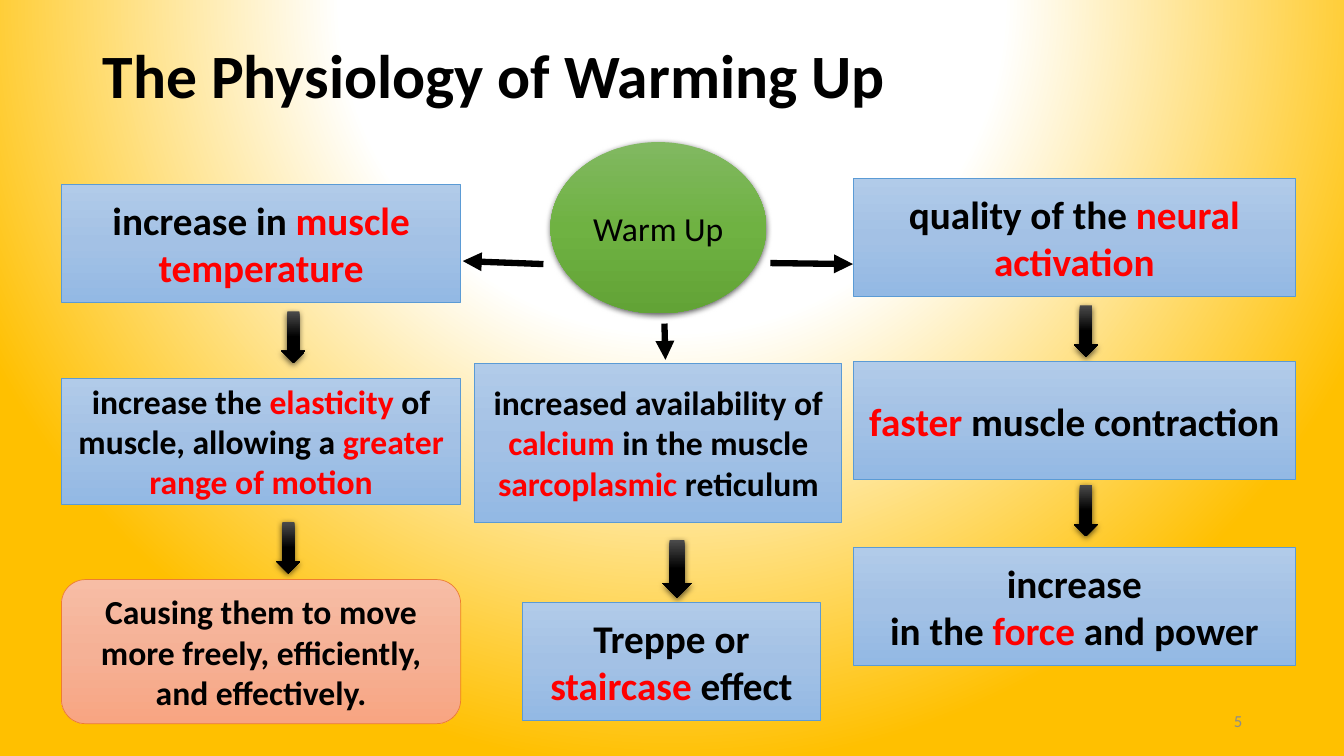
from lxml.etree import SubElement
from pptx import Presentation
from pptx.dml.color import RGBColor
from pptx.enum.shapes import MSO_CONNECTOR, MSO_SHAPE
from pptx.enum.text import MSO_ANCHOR, PP_ALIGN
from pptx.oxml import parse_xml
from pptx.oxml.ns import nsdecls, qn
from pptx.util import Inches, Pt

BLACK, RED = "000000", "FF0000"
BLUE_FILL = [(0, "B1CBE9"), (50, "A3C1E5"), (100, "93B9E4")]
ORANGE_FILL = [(0, "F7BDA5"), (50, "F5B196"), (100, "F8A582")]
GREEN_FILL = [(0, "81B861"), (50, "6FB242"), (100, "62A336")]
BLACK_FILL = [(0, "4B4B4B"), (50, BLACK), (100, BLACK)]
DOWNWARD = '<a:lin ang="5400000" scaled="0"/>'
FROM_TOP = ('<a:path path="circle"><a:fillToRect l="50000" t="-80000" '
            'r="50000" b="180000"/></a:path>')


def paint_gradient(fill, owner, stops, direction=DOWNWARD):
    """Give the fill of owner these (percent, hex colour) stops."""
    fill.gradient()
    default = owner.find(".//" + qn("a:gradFill"))
    stop_list = "".join(
        f'<a:gs pos="{percent * 1000}"><a:srgbClr val="{color}"/></a:gs>'
        for percent, color in stops)
    default.getparent().replace(default, parse_xml(
        f'<a:gradFill {nsdecls("a")} rotWithShape="1">'
        f'<a:gsLst>{stop_list}</a:gsLst>{direction}</a:gradFill>'))


def add_block(box, text="", kind=None, stops=None, outline=None, shadow=False,
              size=28, bold=True, color=BLACK, align=PP_ALIGN.CENTER, spacing=None):
    """Add a shape, or a text box without kind; text between bars is red."""
    place = [Inches(value) for value in box]
    if kind is None:
        shape = slide.shapes.add_textbox(*place)
    else:
        shape = slide.shapes.add_shape(kind, *place)
        paint_gradient(shape.fill, shape.element, stops)
        shape.shadow.inherit = False
        if outline:
            shape.line.color.rgb = RGBColor.from_string(outline)
            shape.line.width = Pt(0.5)
        else:
            shape.line.fill.background()
    if shadow:
        effects = shape.element.spPr.find(qn("a:effectLst"))
        effects.append(parse_xml(
            f'<a:outerShdw {nsdecls("a")} blurRad="57150" dist="19050" dir="5400000" '
            'algn="ctr" rotWithShape="0"><a:srgbClr val="000000">'
            '<a:alpha val="63000"/></a:srgbClr></a:outerShdw>'))
    if not text:
        return
    frame = shape.text_frame
    frame.word_wrap = True
    frame.vertical_anchor = MSO_ANCHOR.MIDDLE
    for index, line in enumerate(text.split("\n")):
        paragraph = frame.add_paragraph() if index else frame.paragraphs[0]
        paragraph.alignment = align
        paragraph.line_spacing = spacing
        for position, part in enumerate(line.split("|")):
            if part:
                run = paragraph.add_run()
                run.text = part
                run.font.name = "Calibri"
                run.font.size = Pt(size)
                run.font.bold = bold
                run.font.color.rgb = RGBColor.from_string(RED if position % 2 else color)


presentation = Presentation()
presentation.slide_width = Inches(13.33)
presentation.slide_height = Inches(7.5)
slide = presentation.slides.add_slide(presentation.slide_layouts[6])
paint_gradient(slide.background.fill, slide.element,
               [(0, "FFFFFF"), (43, "FFFFFF"), (100, "FFC000")], FROM_TOP)

add_block((0.92, 0.31, 11.5, 0.93), "The Physiology of Warming Up", size=44,
          align=PP_ALIGN.LEFT, spacing=0.9)

down_arrows = [(2.79, 3.09), (2.74, 5.18), (10.65, 3.03), (10.65, 4.81)]
for left, top in down_arrows:
    add_block((left, top, 0.24, 0.51), kind=MSO_SHAPE.DOWN_ARROW,
              stops=BLACK_FILL, shadow=True)
add_block((6.57, 5.36, 0.29, 0.57), kind=MSO_SHAPE.DOWN_ARROW,
          stops=BLACK_FILL, shadow=True)

add_block((5.46, 1.41, 2.14, 1.7), "Warm Up", kind=MSO_SHAPE.OVAL,
          stops=GREEN_FILL, shadow=True, size=24, bold=False)

effects_of_warm_up = [
    ((0.61, 1.83, 3.96, 1.17), 28, "increase in |muscle temperature|"),
    ((0.61, 3.75, 3.96, 1.25), 24,
     "increase the |elasticity| of muscle, allowing a |greater range of motion|"),
    ((4.71, 3.6, 3.64, 1.58), 24,
     "increased availability of |calcium| in the muscle |sarcoplasmic| reticulum"),
    ((5.18, 5.98, 2.96, 1.17), 28, "Treppe or |staircase| effect"),
    ((8.46, 1.77, 4.39, 1.17), 28, "quality of the |neural activation|"),
    ((8.46, 3.59, 4.39, 1.17), 28, "|faster| muscle contraction"),
    ((8.46, 5.43, 4.39, 1.17), 28, "increase\nin the |force| and power"),
]
for box, size, text in effects_of_warm_up:
    add_block(box, text, kind=MSO_SHAPE.RECTANGLE, stops=BLUE_FILL,
              outline="5B9BD5", size=size)
add_block((0.61, 5.75, 3.96, 1.43),
          "Causing them to move more freely, efficiently, and effectively.",
          kind=MSO_SHAPE.ROUNDED_RECTANGLE, stops=ORANGE_FILL, outline="ED7D31", size=24)

branches = [(5.39, 2.62, 4.59, 2.59), (7.64, 2.61, 8.46, 2.62), (6.59, 3.21, 6.6, 3.57)]
for ends in branches:
    connector = slide.shapes.add_connector(
        MSO_CONNECTOR.STRAIGHT, *[Inches(value) for value in ends])
    connector.line.color.rgb = RGBColor.from_string(BLACK)
    connector.line.width = Pt(4.5)
    properties = connector.element.spPr
    SubElement(properties.find(qn("a:ln")), qn("a:tailEnd"), type="triangle")
    SubElement(properties, qn("a:effectLst"))

add_block((9.42, 6.95, 3, 0.4), "5", size=12, bold=False, color="8C8C8C",
          align=PP_ALIGN.RIGHT)

presentation.save("out.pptx")
